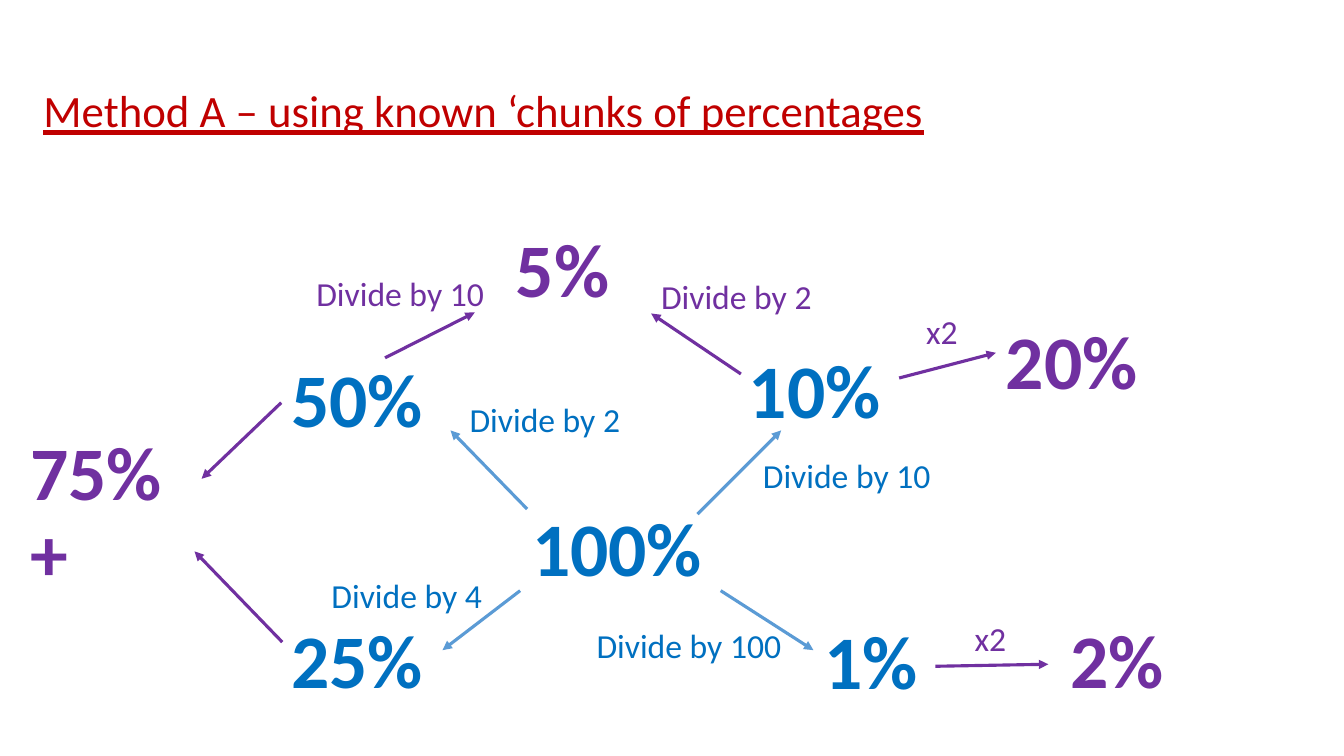
from dataclasses import dataclass

from lxml import etree
from pptx import Presentation, util as u
from pptx.dml.color import RGBColor
from pptx.enum import shapes, text
from pptx.oxml import ns

COLOURS = {"title": "C00000", "blue": "0070C0", "purple": "7030A0", "light": "5B9BD5"}
WIDTH, HEIGHT = u.Inches(13.33), u.Inches(7.5)
COLUMNS, ROWS = 40, 30


@dataclass
class Percentage:
    words: str
    column: float
    row: float
    colour: str = "blue"
    columns: float = 5.07
    rows: float = 5.8


@dataclass
class Step:
    words: str
    column: float
    row: float
    colour: str = "blue"
    columns: float = 6.51
    rows: float = 2


@dataclass
class Arrow:
    start: tuple[float, float]
    end: tuple[float, float]
    colour: str = "light"
    source: str = ""


PERCENTAGES = [
    Percentage("100%", 15.54, 19, columns=7.11),
    Percentage("50%", 8.37, 13.08),
    Percentage("25%", 8.37, 23.44),
    Percentage("10%", 21.99, 12.72),
    Percentage("1%", 24.24, 23.48),
    Percentage("75%\n+", 0.6, 17.6, "purple", 7.11),
    Percentage("5%", 15.06, 8.68, "purple", 3.75, 4.28),
    Percentage("20%", 29.64, 11.6, "purple"),
    Percentage("2%", 31.56, 24.08, "purple", 3.81, 4.56),
]
STEPS = [
    Step("Divide by 10", 22.41, 17.84),
    Step("Divide by 100", 17.46, 24.6),
    Step("Divide by 2", 13.68, 15.64),
    Step("Divide by 4", 9.57, 22.6),
    Step("Divide by 10", 9.12, 10.64, "purple"),
    Step("Divide by 2", 19.38, 10.76, "purple"),
    Step("x2", 27.27, 12.16, "purple", 2.07),
    Step("x2", 28.71, 24.32, "purple", 2.07),
]
ARROWS = [
    Arrow((20.76, 20.4), (23.25, 17.08)),
    Arrow((21.45, 23.44), (24.21, 25.8)),
    Arrow((15.69, 20.2), (13.41, 17.08)),
    Arrow((15.48, 23.44), (13.17, 25.8)),
    Arrow((8.37, 15.98), (6, 19), "purple", "50%"),
    Arrow((8.4, 25.48), (5.79, 21.88), "purple"),
    Arrow((22.05, 14.84), (19.38, 12.44), "purple"),
    Arrow((11.46, 14.2), (14.13, 12.4), "purple"),
    Arrow((26.76, 15), (29.64, 14), "purple"),
    Arrow((27.84, 26.44), (31.2, 26.36), "purple"),
]


def across(columns: float) -> int:
    return round(WIDTH * columns / COLUMNS)


def down(rows: float) -> int:
    return round(HEIGHT * rows / ROWS)


def colour_of(name: str) -> RGBColor:
    return RGBColor.from_string(COLOURS[name])


def write(box, words: str, size: float, colour: str, bold: bool = False,
          spacing: float = 1.0, underline: bool = False) -> None:
    frame = box.text_frame
    frame.word_wrap = True
    frame.text = words
    for para in frame.paragraphs:
        para.alignment = text.PP_ALIGN.LEFT
        para.line_spacing = spacing
        font = para.font
        font.name, font.size = "Calibri", u.Pt(size)
        font.bold, font.underline = bold, underline
        font.color.rgb = colour_of(colour)


def add_box(page, item: Percentage | Step):
    return page.shapes.add_textbox(across(item.column), down(item.row),
                                   across(item.columns), down(item.rows))


def draw_percentage(page, item: Percentage):
    box = add_box(page, item)
    write(box, item.words, 54, item.colour, bold=True, spacing=0.9)
    box.text_frame.vertical_anchor = text.MSO_ANCHOR.MIDDLE
    return box


def draw_step(page, item: Step) -> None:
    box = add_box(page, item)
    write(box, item.words, 24, item.colour)
    box.text_frame.auto_size = text.MSO_AUTO_SIZE.SHAPE_TO_FIT_TEXT


def draw_arrow(page, arrow: Arrow, boxes: dict) -> None:
    (left, top), (right, bottom) = arrow.start, arrow.end
    connector = page.shapes.add_connector(
        shapes.MSO_CONNECTOR.STRAIGHT,
        across(left), down(top), across(right), down(bottom))
    if arrow.source:
        connector.begin_connect(boxes[arrow.source], 1)
    connector.line.color.rgb = colour_of(arrow.colour)
    connector.line.width = u.Pt(2.25)
    outline = connector.line._get_or_add_ln()
    etree.SubElement(outline, ns.qn("a:tailEnd"), type="triangle")
    etree.SubElement(connector._element.spPr, ns.qn("a:effectLst"))


def draw_title(page) -> None:
    title = page.shapes.title
    title.left, title.top = across(0.99), down(0.68)
    title.width, title.height = across(38.37), down(7.64)
    write(title, "Method A – using known ‘chunks of percentages", 32, "title",
          spacing=0.9, underline=True)
    title.text_frame.vertical_anchor = text.MSO_ANCHOR.MIDDLE


def main() -> None:
    deck = Presentation()
    deck.slide_width, deck.slide_height = WIDTH, HEIGHT
    page = deck.slides.add_slide(deck.slide_layouts.get_by_name("Title Only"))
    draw_title(page)
    boxes = {item.words: draw_percentage(page, item) for item in PERCENTAGES}
    for step in STEPS:
        draw_step(page, step)
    for arrow in ARROWS:
        draw_arrow(page, arrow, boxes)
    deck.save("out.pptx")


if __name__ == "__main__":
    main()
